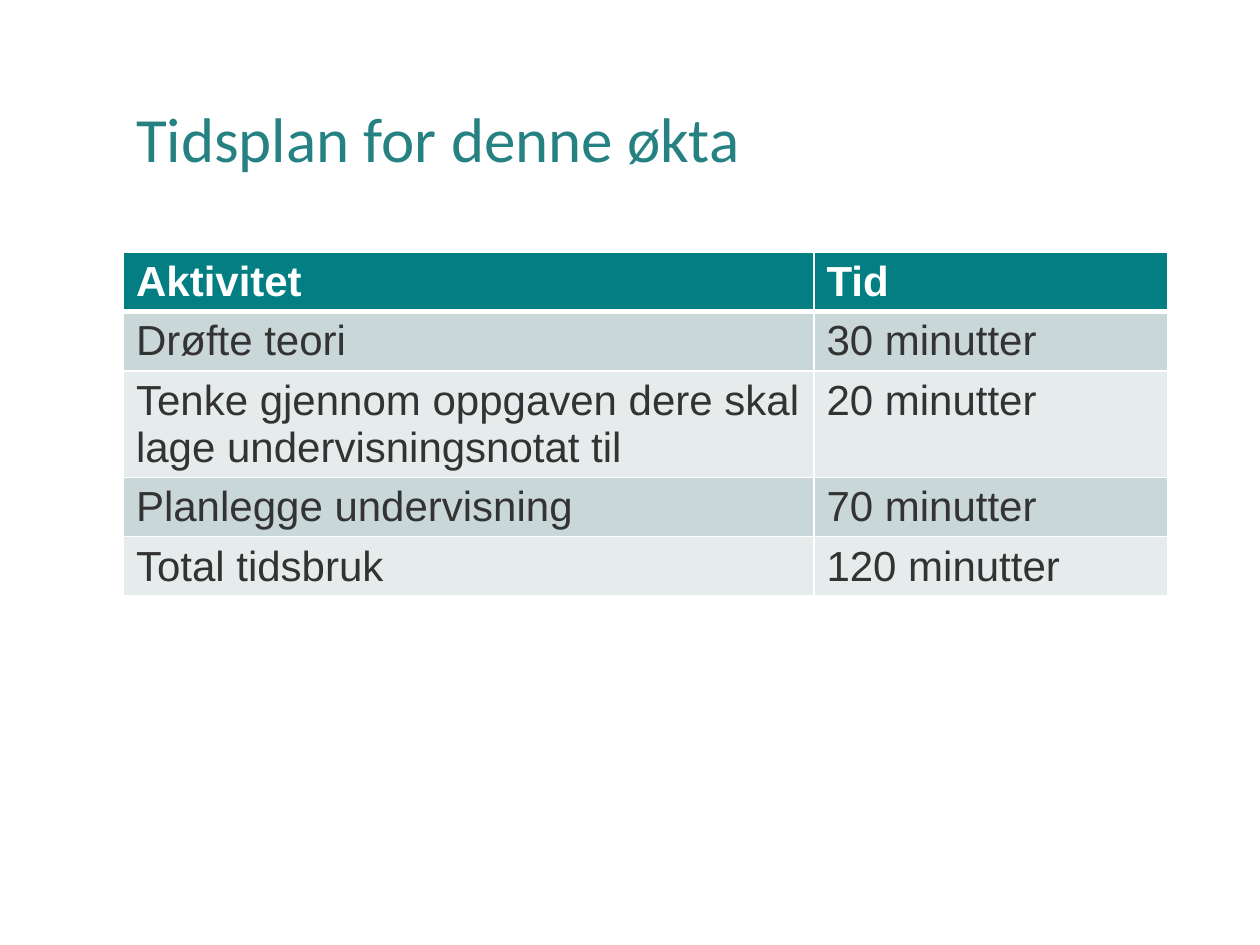
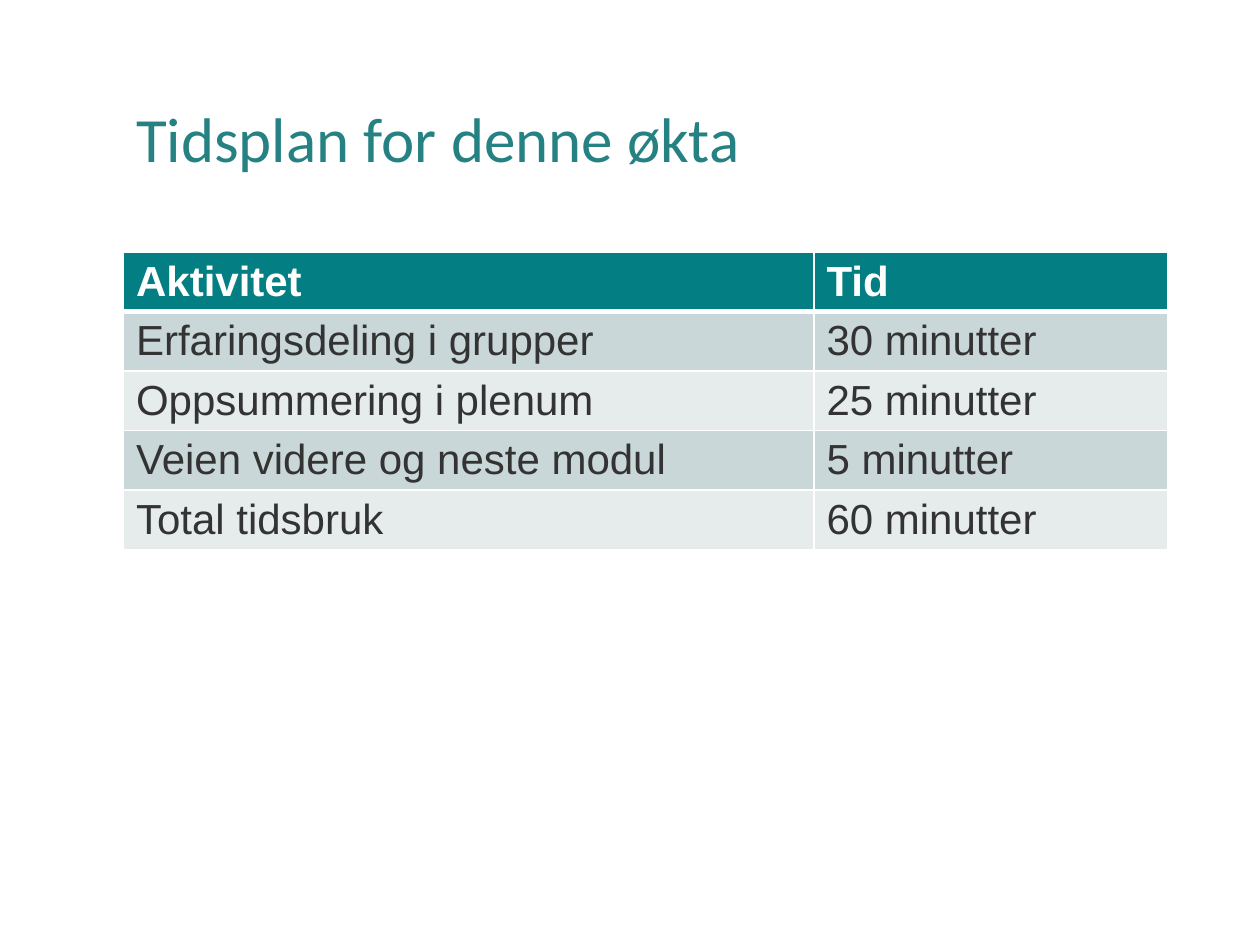
from dataclasses import dataclass

from lxml import etree
from pptx import Presentation
from pptx.dml.color import RGBColor
from pptx.enum.text import MSO_ANCHOR, MSO_AUTO_SIZE, PP_ALIGN
from pptx.oxml.ns import qn
from pptx.util import Inches, Pt

MIDDLE = MSO_ANCHOR.MIDDLE
NO_AUTOFIT = MSO_AUTO_SIZE.NONE
LEFT = PP_ALIGN.LEFT
TITLE_ONLY = 5


@dataclass(frozen=True)
class Theme:
    title_color: str = "268183"
    header_fill: str = "037F83"
    header_text: str = "FFFFFF"
    body_text: str = "333333"
    bands: tuple = ("CAD7D8", "E6ECEC")
    border: str = "FFFFFF"
    thin: float = 1
    thick: float = 3
    title_font: str = "Calibri"
    table_font: str = "Arial"
    title_size: int = 36
    table_size: int = 24


LEFT_EDGE, CONTENT_WIDTH = 0.98, 8.29
TITLE_TOP, TITLE_HEIGHT = 0.4, 1.45
TABLE_TOP, ROW_HEIGHT = 2, 0.41
COLUMN_WIDTHS = (5.48, 2.81)

HEADINGS = ("Aktivitet", "Tid")
SESSIONS = (
    (
        ("Drøfte teori", "30 minutter"),
        ("Tenke gjennom oppgaven dere skal lage undervisningsnotat til", "20 minutter"),
        ("Planlegge undervisning", "70 minutter"),
        ("Total tidsbruk", "120 minutter"),
    ),
    (
        ("Erfaringsdeling i grupper", "30 minutter"),
        ("Oppsummering i plenum", "25 minutter"),
        ("Veien videre og neste modul", "5 minutter"),
        ("Total tidsbruk", "60 minutter"),
    ),
)


def apply(target, values):
    for name, value in values.items():
        setattr(target, name, value)


class Deck:
    def __init__(self, theme):
        self.theme = theme
        self.slide = None
        self.presentation = Presentation()
        apply(self.presentation, {"slide_width": Inches(10), "slide_height": Inches(7.5)})

    def add_slide(self):
        layout = self.presentation.slide_layouts[TITLE_ONLY]
        self.slide = self.presentation.slides.add_slide(layout)

    def style_font(self, font, color, **values):
        apply(font, values)
        font.color.rgb = RGBColor.from_string(color)

    def title(self, text):
        heading = self.slide.shapes.title
        apply(heading, {
            "left": Inches(LEFT_EDGE), "top": Inches(TITLE_TOP),
            "width": Inches(CONTENT_WIDTH), "height": Inches(TITLE_HEIGHT),
        })
        frame = heading.text_frame
        apply(frame, {
            "text": text, "word_wrap": True,
            "auto_size": NO_AUTOFIT, "vertical_anchor": MIDDLE,
        })
        paragraph = frame.paragraphs[0]
        apply(paragraph, {"alignment": LEFT, "line_spacing": 0.9})
        self.style_font(paragraph.runs[0].font, self.theme.title_color,
                        name=self.theme.title_font, size=Pt(self.theme.title_size))

    def borders(self, cell, row):
        widths = {"L": self.theme.thin, "R": self.theme.thin,
                  "T": self.theme.thick if row == 1 else self.theme.thin,
                  "B": self.theme.thick if row == 0 else self.theme.thin}
        properties = cell._tc.get_or_add_tcPr()
        for side, width in widths.items():
            line = etree.SubElement(properties, qn(f"a:ln{side}"), w=str(Pt(width)))
            fill = etree.SubElement(line, qn("a:solidFill"))
            etree.SubElement(fill, qn("a:srgbClr"), val=self.theme.border)

    def cell(self, cell, text, row):
        theme = self.theme
        header = row == 0
        cell.text = text
        self.borders(cell, row)
        cell.fill.solid()
        band = theme.bands[(row - 1) % len(theme.bands)]
        cell.fill.fore_color.rgb = RGBColor.from_string(theme.header_fill if header else band)
        self.style_font(cell.text_frame.paragraphs[0].runs[0].font,
                        theme.header_text if header else theme.body_text,
                        name=theme.table_font, size=Pt(theme.table_size), bold=header)

    def table(self, rows):
        schedule = self.slide.shapes.add_table(
            len(rows), len(COLUMN_WIDTHS), Inches(LEFT_EDGE), Inches(TABLE_TOP),
            Inches(CONTENT_WIDTH), Inches(ROW_HEIGHT * len(rows))).table
        for column, width in zip(schedule.columns, COLUMN_WIDTHS):
            column.width = Inches(width)
        for row, texts in enumerate(rows):
            for column, text in enumerate(texts):
                self.cell(schedule.cell(row, column), text, row)


def main():
    deck = Deck(Theme())
    for activities in SESSIONS:
        deck.add_slide()
        deck.title("Tidsplan for denne økta")
        deck.table((HEADINGS, *activities))
    deck.presentation.save("out.pptx")


if __name__ == "__main__":
    main()
